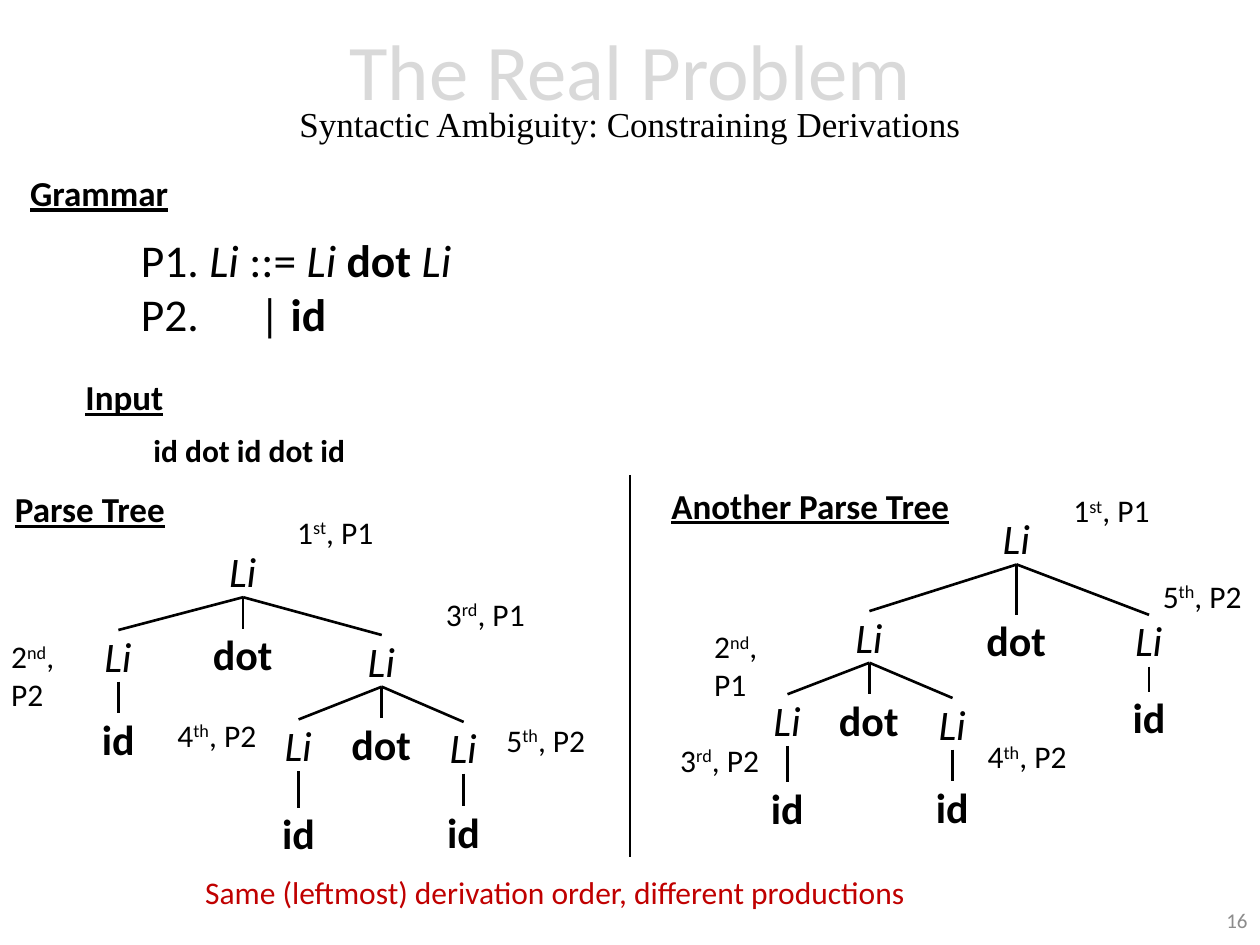
from collections import namedtuple

from lxml import etree
from pptx import Presentation
from pptx.dml.color import RGBColor
from pptx.enum import shapes, text
from pptx.oxml import ns
from pptx.util import Inches, Pt

COLORS = {"ink": "000000", "pale": "D9D9D9", "gray": "8C8C8C", "red": "C00000"}
NODE_WIDTHS = {"Li": 0.42, "dot": 0.68, "id": 0.46}
NODE_HEIGHT = 0.41

# x is the centre of the word, top the upper edge of its box
Node = namedtuple("Node", "word x top children", defaults=[()])

LEFT_TREE = Node("Li", 1.93, 4.33, [
    Node("Li", 0.94, 5, [Node("id", 0.94, 5.66)]),
    Node("dot", 1.93, 4.99),
    Node("Li", 3.03, 5.04, [
        Node("Li", 2.37, 5.71, [Node("id", 2.37, 6.41)]),
        Node("dot", 3.03, 5.7),
        Node("Li", 3.68, 5.73, [Node("id", 3.68, 6.4)]),
    ]),
])
RIGHT_TREE = Node("Li", 8.07, 4.07, [
    Node("Li", 6.9, 4.85, [
        Node("Li", 6.25, 5.51, [Node("id", 6.25, 6.21)]),
        Node("dot", 6.9, 5.51),
        Node("Li", 7.56, 5.54, [Node("id", 7.56, 6.2)]),
    ]),
    Node("dot", 8.07, 4.88),
    Node("Li", 9.12, 4.88, [Node("id", 9.12, 5.49)]),
])

# left, top, number, ordinal ending, production
STEPS = [
    (2.26, 4.02, "1", "st", "P1"),
    (-0.01, 5.01, "2", "nd", "P2"),
    (3.44, 4.67, "3", "rd", "P1"),
    (1.31, 5.63, "4", "th", "P2"),
    (3.92, 5.67, "5", "th", "P2"),
    (8.42, 3.85, "1", "st", "P1"),
    (5.57, 4.93, "2", "nd", "P1"),
    (5.3, 5.83, "3", "rd", "P2"),
    (7.74, 5.8, "4", "th", "P2"),
    (9.13, 4.53, "5", "th", "P2"),
]

HEADINGS = [
    ("Grammar", 0.14, 1.35, 1.45, 0.98),
    ("Input", 0.58, 2.97, 1.69, 0.41),
    ("Parse Tree", 0.02, 3.86, 1.45, 0.61),
    ("Another Parse Tree", 5.23, 3.83, 2.6, 0.61),
]


def add_box(page, left, top, width, height, wrap=True):
    """Add an empty text box and return its text frame."""
    box = page.shapes.add_textbox(
        Inches(left), Inches(top), Inches(width), Inches(height))
    box.text_frame.word_wrap = wrap
    return box.text_frame


def add_span(para, words, size, color="ink", font="Calibri",
             bold=False, italic=False, underline=False):
    span = para.add_run()
    span.text = words
    span.font.name = font
    span.font.size = Pt(size)
    span.font.bold = bold
    span.font.italic = italic
    span.font.underline = underline
    span.font.color.rgb = RGBColor.from_string(COLORS[color])
    return span


def add_line(page, x1, y1, x2, y2):
    line = page.shapes.add_connector(
        shapes.MSO_CONNECTOR.STRAIGHT,
        Inches(x1), Inches(y1), Inches(x2), Inches(y2))
    line.line.color.rgb = RGBColor.from_string(COLORS["ink"])
    line.line.width = Pt(1.5)
    etree.SubElement(line._element.spPr, ns.qn("a:effectLst"))


def add_title(page):
    frame = add_box(page, 0.69, 0.03, 8.62, 1.45)
    frame.vertical_anchor = text.MSO_ANCHOR.MIDDLE
    para = frame.paragraphs[0]
    para.alignment = text.PP_ALIGN.CENTER
    para.line_spacing = 0.7
    add_span(para, "The Real Problem", 45, "pale")
    para.add_line_break()
    add_span(para, "Syntactic Ambiguity: Constraining Derivations", 20,
             font="Times New Roman")


def add_heading(page, words, *place):
    para = add_box(page, *place).paragraphs[0]
    para.line_spacing = 0.9
    para.space_before = Pt(10)
    add_span(para, words, 20, bold=True, underline=True)


def add_grammar(page):
    frame = add_box(page, 1.02, 1.79, 3.08, 0.98)
    first = frame.paragraphs[0]
    add_span(first, "P1.", 26)
    add_span(first, " Li", 26, italic=True)
    add_span(first, " ::= ", 26)
    add_span(first, "Li ", 26, italic=True)
    add_span(first, "dot ", 26, bold=True)
    add_span(first, "Li", 26, italic=True)

    second = frame.add_paragraph()
    stops = etree.SubElement(second._p.get_or_add_pPr(), ns.qn("a:tabLst"))
    etree.SubElement(stops, ns.qn("a:tab"), pos=str(Inches(0.94)), algn="l")
    add_span(second, "P2.\t| ", 26)
    add_span(second, "id", 26, bold=True)


def add_tree(page, node):
    """Draw a node, then its branches and subtrees."""
    width = NODE_WIDTHS[node.word]
    frame = add_box(page, node.x - width / 2, node.top, width, NODE_HEIGHT, wrap=False)
    frame.margin_top = frame.margin_bottom = 0
    is_symbol = node.word == "Li"
    add_span(frame.paragraphs[0], node.word, 24,
             bold=not is_symbol, italic=is_symbol)
    for child in node.children:
        add_line(page, node.x, node.top + NODE_HEIGHT, child.x, child.top)
        add_tree(page, child)


def add_step(page, left, top, number, ending, production):
    para = add_box(page, left, top, 0.85, 0.4, wrap=False).paragraphs[0]
    add_span(para, number, 18)
    raised = add_span(para, ending, 18)
    raised.font._element.set("baseline", "30000")
    add_span(para, f", {production}", 18)


def add_page_number(page):
    frame = add_box(page, 7.75, 7.1, 2.25, 0.4)
    frame.vertical_anchor = text.MSO_ANCHOR.MIDDLE
    para = frame.paragraphs[0]
    para.alignment = text.PP_ALIGN.RIGHT
    add_span(para, "16", 12, "gray")


def main():
    deck = Presentation()
    deck.slide_width, deck.slide_height = Inches(10), Inches(7.5)
    page = deck.slides.add_slide(deck.slide_layouts[6])

    add_page_number(page)
    add_title(page)
    for heading in HEADINGS:
        add_heading(page, *heading)
    add_grammar(page)
    sentence = add_box(page, 1.12, 3.37, 1.8, 0.4, wrap=False)
    add_span(sentence.paragraphs[0], "id dot id dot id", 18, bold=True)

    for tree in (LEFT_TREE, RIGHT_TREE):
        add_tree(page, tree)
    for step in STEPS:
        add_step(page, *step)
    add_line(page, 5, 3.77, 5, 6.8)

    remark = add_box(page, 1.53, 6.88, 6.94, 0.4)
    add_span(remark.paragraphs[0],
             "Same (leftmost) derivation order, different productions", 18, "red")
    deck.save("out.pptx")


if __name__ == "__main__":
    main()
